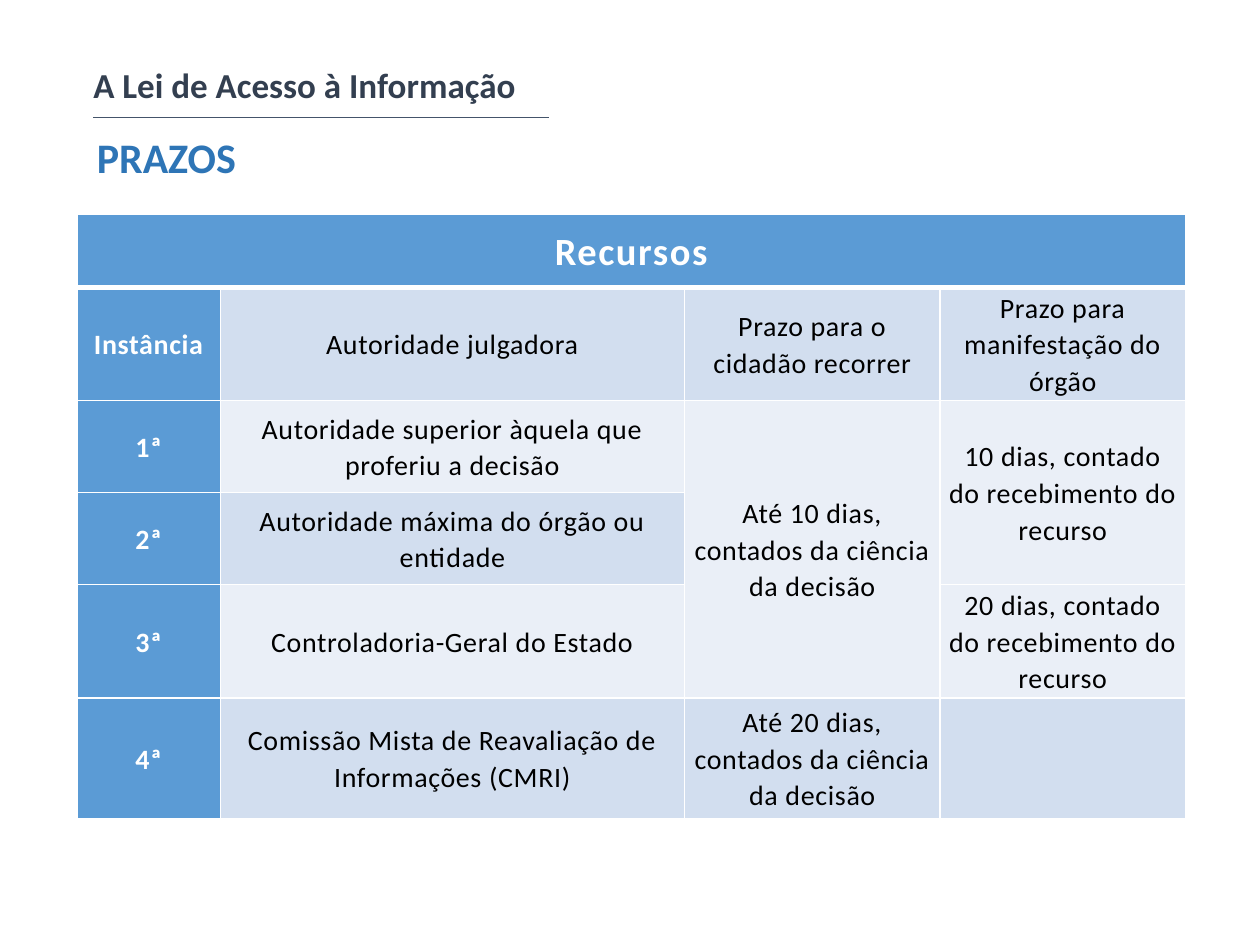
from lxml.etree import SubElement
from pptx import Presentation
from pptx.dml.color import RGBColor
from pptx.enum.shapes import MSO_CONNECTOR as Connector
from pptx.enum.text import MSO_ANCHOR as Anchor, MSO_AUTO_SIZE as AutoSize, PP_ALIGN as Align
from pptx.oxml import parse_xml
from pptx.oxml.ns import nsdecls, qn
from pptx.util import Inches, Pt

WIDTH, HEIGHT = Inches(10), Inches(7.5)
FONT = "Calibri"
COLORS = {
    "heading": "333F50", "rule": "44546A", "subtitle": "2E75B6",
    "accent": "5B9BD5", "dark_band": "D2DEEF", "light_band": "EAEFF7",
    "white": "FFFFFF", "black": "000000",
}

TABLE_TITLE = "Recursos"
APPEALS = [
    ["Instância", "Autoridade julgadora", "Prazo para o cidadão recorrer",
     "Prazo para manifestação do órgão"],
    ["1ª", "Autoridade superior àquela que proferiu a decisão",
     "Até 10 dias, contados da ciência da decisão",
     "10 dias, contado do recebimento do recurso"],
    ["2ª", "Autoridade máxima do órgão ou entidade", "", ""],
    ["3ª", "Controladoria-Geral do Estado", "",
     "20 dias, contado do recebimento do recurso"],
    ["4ª", "Comissão Mista de Reavaliação de Informações (CMRI)",
     "Até 20 dias, contados da ciência da decisão", ""],
]
COLUMN_WIDTHS = [1.14, 3.69, 2.03, 1.95]
ROW_HEIGHTS = [0.58, 0.9, 0.73, 0.73, 0.9, 0.96]
# First and last (row, column) of each merged area
MERGES = [((0, 0), (0, 3)), ((2, 2), (4, 2)), ((2, 3), (3, 3))]


def rgb(name):
    return RGBColor.from_string(COLORS[name])


def write(frame, text, size, color, bold=False, align=Align.LEFT,
          line_spacing=None, tracking=None):
    paragraph = frame.paragraphs[0]
    paragraph.alignment = align
    if line_spacing:
        paragraph.line_spacing = line_spacing
    run = paragraph.add_run()
    run.text = text
    font = run.font
    font.name, font.size, font.bold = FONT, Pt(size), bold
    font.color.rgb = rgb(color)
    if tracking:
        run._r.get_or_add_rPr().set("spc", str(round(tracking * 100)))


def fit_to_text(frame):
    frame.word_wrap = False
    frame.auto_size = AutoSize.SHAPE_TO_FIT_TEXT
    frame.vertical_anchor = Anchor.TOP


def place_headings(slide, left, top, width, height):
    # Slide title
    title = slide.shapes.title
    title.left, title.top = left, top
    title.width, title.height = width, int(height * 0.42)
    fit_to_text(title.text_frame)
    write(title.text_frame, "A Lei de Acesso à Informação", 20, "heading", bold=True)

    # Rule below the title
    rule_left, rule_top = left + Inches(0.1), top + int(height * 0.46)
    rule = slide.shapes.add_connector(
        Connector.STRAIGHT, rule_left, rule_top, rule_left + Inches(3.62), rule_top)
    rule.line.color.rgb = rgb("rule")
    rule.line.width = Pt(0.5)
    SubElement(rule._element.spPr, qn("a:effectLst"))

    # Subtitle
    subtitle = slide.shapes.add_textbox(
        left + Inches(0.03), top + int(height * 0.52), Inches(1.32), int(height * 0.48))
    fit_to_text(subtitle.text_frame)
    write(subtitle.text_frame, "PRAZOS", 24, "subtitle", bold=True)


def set_borders(cell, **points):
    properties = cell._tc.get_or_add_tcPr()
    for index, side in enumerate("LRTB"):
        width = Pt(points.get(side, 1))
        properties.insert(index, parse_xml(
            f'<a:ln{side} {nsdecls("a")} w="{width}"><a:solidFill>'
            f'<a:srgbClr val="{COLORS["white"]}"/></a:solidFill></a:ln{side}>'))


def format_cell(cell, row, column):
    is_heading = row == 0 or column == 0
    band = "dark_band" if row % 2 else "light_band"
    cell.fill.solid()
    cell.fill.fore_color.rgb = rgb("accent" if is_heading else band)
    cell.margin_left = cell.margin_right = Inches(0.07)
    cell.margin_top = cell.margin_bottom = 0
    cell.vertical_anchor = Anchor.MIDDLE
    set_borders(cell, T=3 if row == 1 else 1, B=3 if row == 0 else 1)
    return is_heading


def place_appeals_table(slide, left, top, width, height):
    rows = [[TABLE_TITLE, "", "", ""]] + APPEALS
    table = slide.shapes.add_table(
        len(rows), len(COLUMN_WIDTHS), left, top, width, height).table
    for column, share in zip(table.columns, COLUMN_WIDTHS):
        column.width = int(width * share / sum(COLUMN_WIDTHS))
    for row, share in zip(table.rows, ROW_HEIGHTS):
        row.height = int(height * share / sum(ROW_HEIGHTS))

    for r, texts in enumerate(rows):
        for c, text in enumerate(texts):
            cell = table.cell(r, c)
            is_heading = format_cell(cell, r, c)
            if text:
                write(cell.text_frame, text, 16 if r else 22,
                      "white" if is_heading else "black", bold=is_heading,
                      align=Align.CENTER, line_spacing=1.07,
                      tracking=0.4 if r else 0.9)
    for first, last in MERGES:
        table.cell(*first).merge(table.cell(*last))


def main():
    deck = Presentation()
    deck.slide_width, deck.slide_height = WIDTH, HEIGHT
    slide = deck.slides.add_slide(deck.slide_layouts[5])
    place_appeals_table(slide, Inches(0.61), Inches(1.7), Inches(8.8), Inches(4.8))
    place_headings(slide, Inches(0.64), Inches(0.45), Inches(3.59), Inches(1.04))
    deck.save("out.pptx")


if __name__ == "__main__":
    main()
